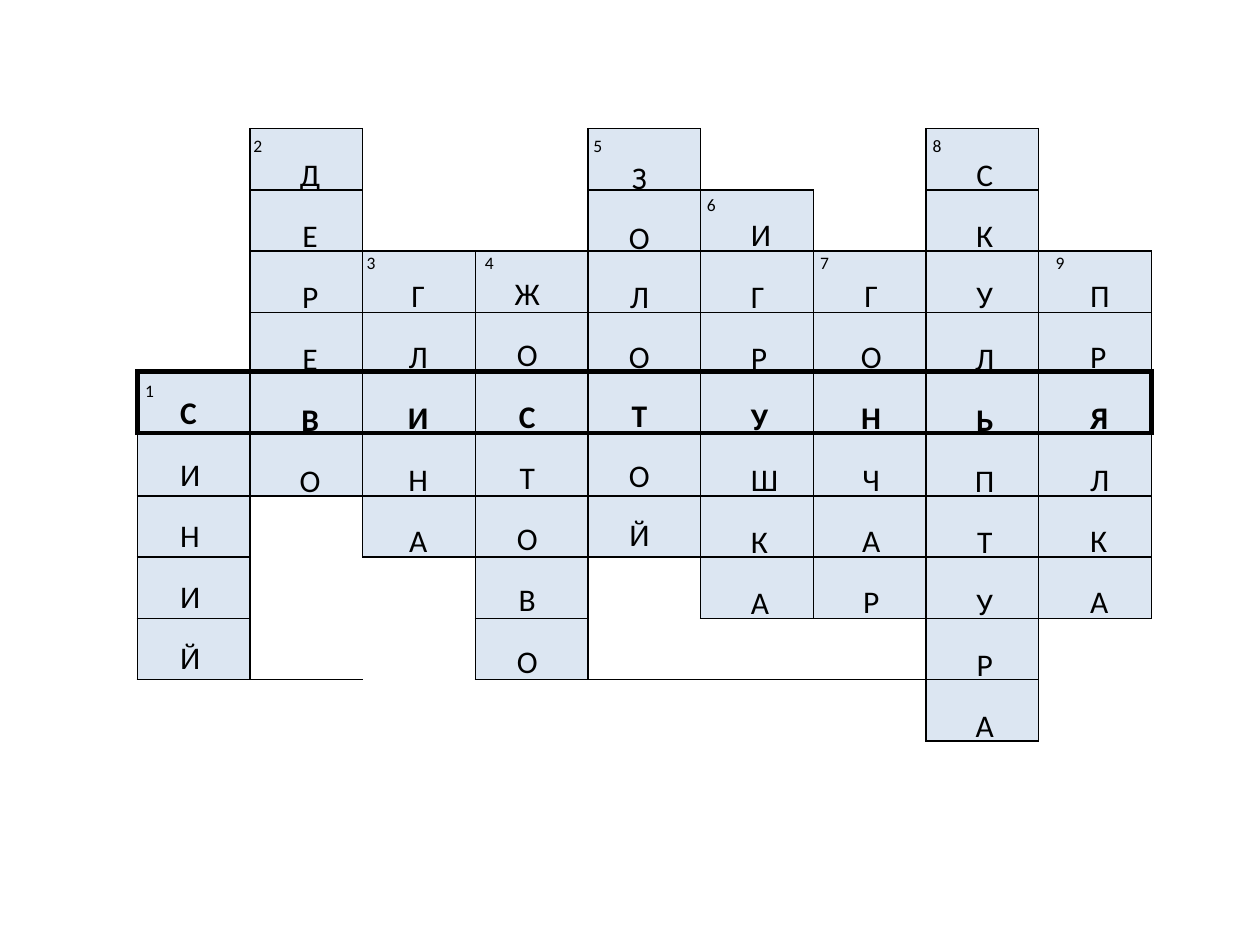
from pptx import Presentation
from pptx.dml.color import RGBColor
from pptx.enum import text as t
from pptx.oxml import parse_xml
from pptx.oxml.ns import nsdecls
from pptx.util import Pt

BLACK = RGBColor(0, 0, 0)
BLUE = RGBColor(0xDC, 0xE6, 0xF2)
LEFT, TOP, WIDE, HIGH = 78.5, 73.5, 64.4, 35
ROWS, COLS, KEY = 10, 9, 4
STEP = 33.6  # from one row to the next for the text boxes
MID, START = t.PP_ALIGN.CENTER, t.PP_ALIGN.LEFT

# word, first row, left, width, first and later line spacing, number left, number width
WORDS = [
    ("СИНИЙ", 4, 95.8, 28, 35, 35, 78.5, 11.5),
    ("ДЕРЕВО", 0, 146.2, 62, 33, 35, 140.4, 11.5),
    ("ГЛИНА", 2, 213.8, 50.4, 35, 35, 202.5, 16.5),
    ("ЖОСТОВО", 2, 281.5, 39.6, 34, 35, 270, 16.5),
    ("ЗОЛОТОЙ", 0, 348.5, 33.8, 35, 34, 332, 16.5),
    ("ИГРУШКА", 1, 422, 30.2, 34, 35, 399.6, 11.5),
    ("ГОНЧАР", 2, 478, 39.6, 35, 35, 461.5, 22.3),
    ("СКУЛЬПТУРА", 0, 540, 45.4, 33, 35, 528.5, 11.5),
    ("ПРЯЛКА", 2, 618.5, 11.5, 35, 35, 596.2, 16.5),
]
# blank areas: row, column, rows, columns
BLANKS = [(0, 0, 4, 1), (0, 2, 2, 1), (0, 3, 2, 1), (0, 5, 1, 2), (0, 8, 2, 1),
          (1, 6, 1, 1), (6, 1, 3, 1), (7, 2, 3, 1), (7, 4, 2, 1), (8, 5, 1, 2),
          (8, 8, 2, 1), (9, 0, 1, 2), (9, 3, 1, 4)]
FULL = {(word[1] + i, col) for col, word in enumerate(WORDS) for i in range(len(word[0]))}


def edge(cell, sides, width):
    """Line the named sides (of L, R, T, B) and clear the others."""
    props = cell._tc.get_or_add_tcPr()
    solid = f'<a:solidFill><a:srgbClr val="{str(BLACK)}"/></a:solidFill>'
    for i, side in enumerate("LRTB"):
        paint = solid if side in sides else "<a:noFill/>"
        props.insert(i, parse_xml(
            f'<a:ln{side} {nsdecls("a")} w="{int(Pt(width))}">{paint}</a:ln{side}>'))


def near(row, col, down, over):
    """Name the sides of a blank area that touch a letter cell."""
    rows, cols = range(row, row + down), range(col, col + over)
    next_to = {"L": [(r, col - 1) for r in rows], "R": [(r, col + over) for r in rows],
               "T": [(row - 1, c) for c in cols], "B": [(row + down, c) for c in cols]}
    return [side for side, spots in next_to.items() if FULL.intersection(spots)]


class Page:
    def __init__(self, slide, font="Calibri", color=BLACK):
        self.slide, self.font, self.color = slide, font, color

    def table(self, rows, cols, left, top, wide, high):
        grid = self.slide.shapes.add_table(
            rows, cols, Pt(left), Pt(top), Pt(wide * cols), Pt(high * rows)).table
        grid.first_row = grid.horz_banding = False
        for col in grid.columns:
            col.width = Pt(wide)
        for row in grid.rows:
            row.height = Pt(high)
        for cell in grid.iter_cells():
            cell.fill.background()
        return grid

    def text(self, lines, left, top, wide, high, size=18, align=START,
             gaps=None, bold=None, wrap=True):
        """Add a box with one paragraph per line; bold is the index of the bold one."""
        box = self.slide.shapes.add_textbox(Pt(left), Pt(top), Pt(wide), Pt(high))
        frame = box.text_frame
        frame.word_wrap = wrap
        frame.auto_size = t.MSO_AUTO_SIZE.SHAPE_TO_FIT_TEXT
        for i, line in enumerate(lines):
            para = frame.add_paragraph() if i else frame.paragraphs[0]
            para.alignment = align
            if gaps:
                para.line_spacing = Pt(gaps[i])
            run = para.add_run()
            run.text = line
            run.font.name, run.font.size = self.font, Pt(size)
            run.font.bold = i == bold
            run.font.color.rgb = self.color


def main():
    deck = Presentation()
    deck.slide_width, deck.slide_height = Pt(720), Pt(540)
    page = Page(deck.slides.add_slide(deck.slide_layouts[6]))

    grid = page.table(ROWS, COLS, LEFT, TOP, WIDE, HIGH)
    for row, col in FULL:
        cell = grid.cell(row, col)
        cell.fill.solid()
        cell.fill.fore_color.rgb = BLUE
        edge(cell, "LRTB", 1)
    for row, col, down, over in BLANKS:
        sides = near(row, col, down, over)
        for r in range(row, row + down):
            for c in range(col, col + over):
                edge(grid.cell(r, c), sides, 1)
        if down * over > 1:
            grid.cell(row, col).merge(grid.cell(row + down - 1, col + over - 1))

    for num, (word, row, left, wide, first, rest, *_) in enumerate(WORDS, 1):
        gaps = [first] + [rest] * (len(word) - 1)
        page.text(word, left, TOP + STEP * row, wide, sum(gaps) + 7.2, gaps=gaps,
                  bold=KEY - row, align=START if num in (1, 6) else MID, wrap=num != 6)
    for num, (_, row, *_, left, wide) in enumerate(WORDS, 1):
        top = 213.8 if num == 1 else TOP + STEP * row
        page.text([str(num)], left, top, wide, 19.4, size=10,
                  align=MID if num == 1 else START)

    frame = page.table(1, 1, LEFT, 212.4, WIDE * COLS, HIGH)
    edge(frame.cell(0, 0), "LRTB", 3)
    deck.save("out.pptx")


if __name__ == "__main__":
    main()
